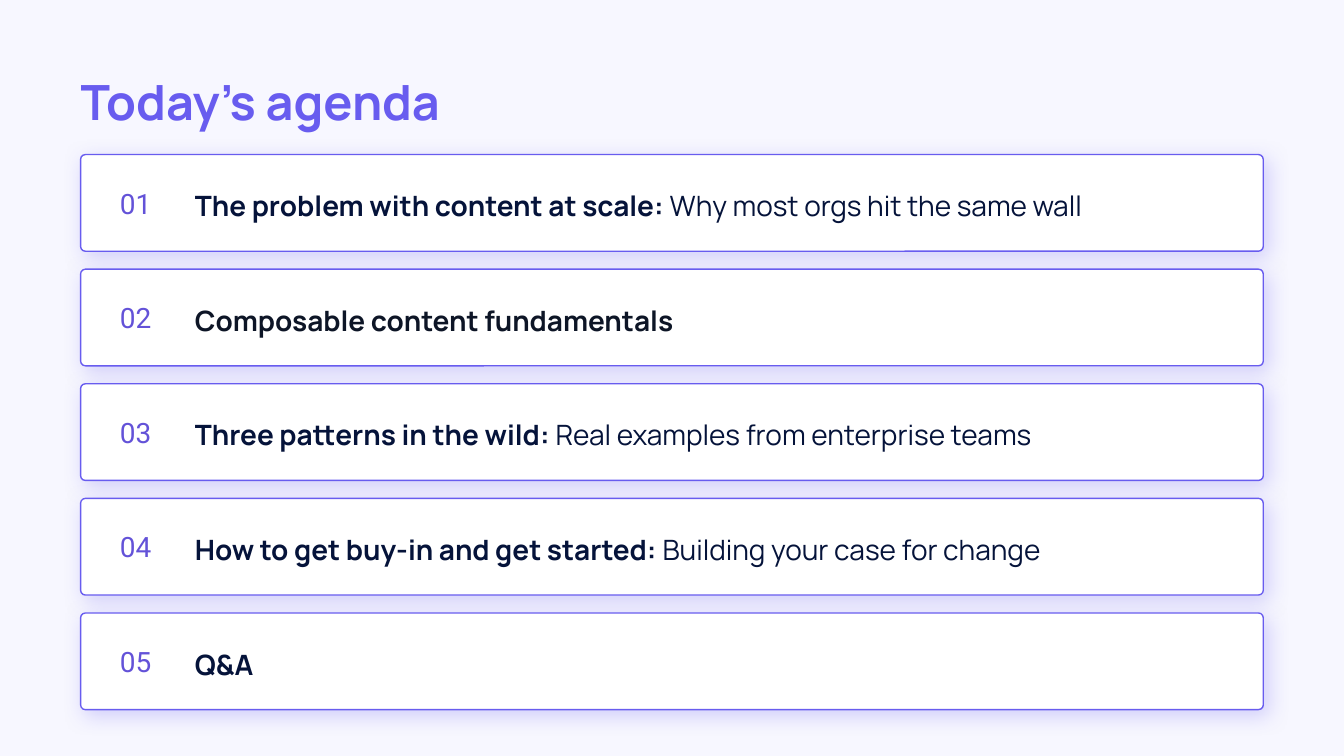
from dataclasses import dataclass

from lxml import etree
from pptx import Presentation
from pptx.dml.color import RGBColor
from pptx.enum import shapes, text
from pptx.oxml import ns
from pptx.util import Pt


@dataclass(frozen=True)
class Theme:
    background: str = "F7F7FF"
    card: str = "FFFFFF"
    accent: str = "685CEF"
    number: str = "6352D8"
    ink: str = "05133A"
    ink_plain: str = "0D1526"
    text_font: str = "Manrope"
    number_font: str = "Roboto"
    title_size: int = 26
    item_size: int = 15


THEME = Theme()

# Layout in points
LEFT, WIDTH = 43.2, 633.6
FIRST_TOP, PITCH, CARD_HEIGHT = 82.8, 61.4, 51.8

# Heading, detail, text colour
AGENDA = [
    ("The problem with content at scale:", "Why most orgs hit the same wall", THEME.ink),
    ("Composable content fundamentals", "", THEME.ink_plain),
    ("Three patterns in the wild:", "Real examples from enterprise teams", THEME.ink),
    ("How to get buy-in and get started:", "Building your case for change", THEME.ink),
    ("Q&A", "", THEME.ink),
]


def style_run(run, font_name, size, color, bold=False):
    run.font.name = font_name
    run.font.size = Pt(size)
    run.font.bold = bold
    run.font.color.rgb = RGBColor.from_string(color)


def prepare_frame(shape):
    """Remove the insets, centre the text vertically and return the frame."""
    frame = shape.text_frame
    frame.margin_left = frame.margin_top = frame.margin_right = frame.margin_bottom = 0
    frame.word_wrap = True
    frame.auto_size = text.MSO_AUTO_SIZE.NONE
    frame.vertical_anchor = text.MSO_ANCHOR.MIDDLE
    return frame


def add_shadow(shape, color):
    shape.shadow.inherit = False
    effects = shape._element.spPr.find(ns.qn("a:effectLst"))
    shadow = etree.SubElement(
        effects, ns.qn("a:outerShdw"), blurRad=str(Pt(11.2)), dist=str(Pt(3)),
        dir=str(45 * 60000), algn="bl", rotWithShape="0")
    fill = etree.SubElement(shadow, ns.qn("a:srgbClr"), val=color)
    etree.SubElement(fill, ns.qn("a:alpha"), val="25000")


def add_title(slide, title):
    shape = slide.shapes.title
    shape.left, shape.top, shape.width, shape.height = Pt(LEFT), Pt(32.4), Pt(WIDTH), Pt(43.2)
    frame = prepare_frame(shape)
    frame.text = title
    paragraph = frame.paragraphs[0]
    paragraph.alignment = text.PP_ALIGN.LEFT
    style_run(paragraph.runs[0], THEME.text_font, THEME.title_size, THEME.accent, True)


def add_card(slide, top):
    card = slide.shapes.add_shape(
        shapes.MSO_SHAPE.ROUNDED_RECTANGLE, Pt(LEFT), Pt(top), Pt(WIDTH), Pt(CARD_HEIGHT))
    card.adjustments[0] = 0.05
    card.fill.solid()
    card.fill.fore_color.rgb = RGBColor.from_string(THEME.card)
    card.line.color.rgb = RGBColor.from_string(THEME.accent)
    card.line.width = Pt(0.75)
    add_shadow(card, THEME.accent)


def add_number(slide, top, number):
    box = slide.shapes.add_textbox(Pt(46.8), Pt(top), Pt(CARD_HEIGHT), Pt(CARD_HEIGHT))
    frame = prepare_frame(box)
    frame.text = f"{number:02d}"
    paragraph = frame.paragraphs[0]
    paragraph.alignment = text.PP_ALIGN.CENTER
    style_run(paragraph.runs[0], THEME.number_font, THEME.item_size, THEME.number)


def add_item(slide, top, heading, detail, color):
    box = slide.shapes.add_textbox(Pt(104.4), Pt(top + 14.7), Pt(538.6), Pt(25.2))
    paragraph = prepare_frame(box).paragraphs[0]
    paragraph.text = f"{heading} " if detail else heading
    style_run(paragraph.runs[0], THEME.text_font, THEME.item_size, color, True)
    if detail:
        run = paragraph.add_run()
        run.text = detail
        style_run(run, THEME.text_font, THEME.item_size, color)


def main():
    presentation = Presentation()
    presentation.slide_width, presentation.slide_height = Pt(720), Pt(405)
    slide = presentation.slides.add_slide(presentation.slide_layouts[5])
    slide.background.fill.solid()
    slide.background.fill.fore_color.rgb = RGBColor.from_string(THEME.background)

    add_title(slide, "Today’s agenda")

    # One card per agenda item
    for index, (heading, detail, color) in enumerate(AGENDA):
        top = FIRST_TOP + index * PITCH
        add_card(slide, top)
        add_number(slide, top, index + 1)
        add_item(slide, top, heading, detail, color)

    presentation.save("out.pptx")


if __name__ == "__main__":
    main()
